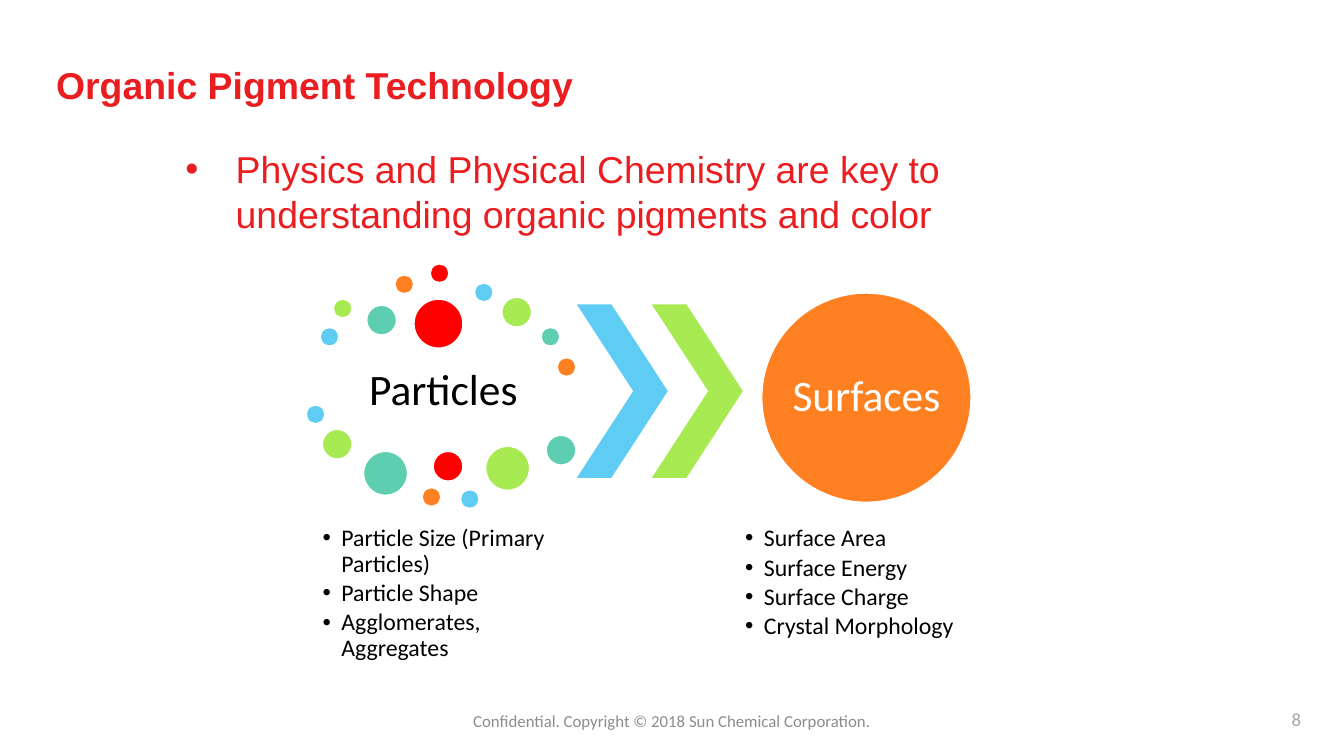
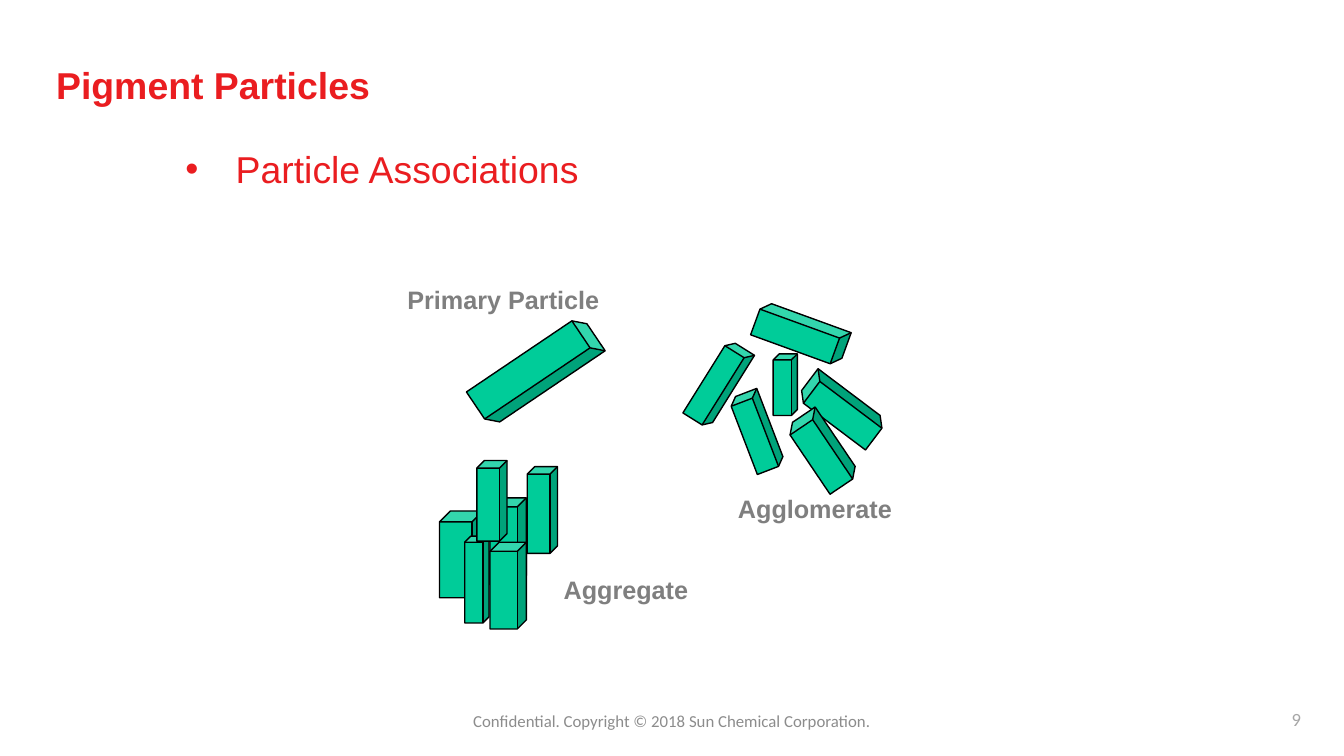
from dataclasses import dataclass
from itertools import cycle

from lxml.etree import SubElement
from pptx import Presentation
from pptx.dml.color import RGBColor
from pptx.enum.shapes import MSO_SHAPE
from pptx.enum.text import MSO_ANCHOR, PP_ALIGN
from pptx.oxml.ns import qn
from pptx.util import Pt


@dataclass(frozen=True)
class Theme:
    heading_font: str = "Arial"
    body_font: str = "Calibri"
    red: str = "EA1D20"
    black: str = "000000"
    white: str = "FFFFFF"
    label_grey: str = "7F7F7F"
    footer_grey: str = "8C8C8C"
    number_grey: str = "A6A6A6"
    sky: str = "5ECCF3"
    lime: str = "A7EA52"
    teal: str = "5DCEAF"
    orange: str = "FF8021"
    dot_red: str = "FF0000"
    cube: str = "00CC99"
    heading: float = 26.7
    concept: float = 31
    label: float = 18
    detail: float = 17
    number: float = 13.3
    footer: float = 12


T = Theme()
COPYRIGHT = "Confidential. Copyright © 2018 Sun Chemical Corporation."

# Dot diameters, then (left, top, diameter) inside the particle cloud
SMALL, MEDIUM, LARGE, HUGE = 14.4, 22.3, 32.4, 36
DOTS = [
    (10, 45.4, SMALL), (19.4, 25.2, SMALL), (43.2, 29.5, MEDIUM),
    (63.4, 7.9, SMALL), (88.6, 0, SMALL), (120.2, 13.7, SMALL),
    (139.7, 23.8, MEDIUM), (167.8, 45.4, SMALL), (179.3, 67, SMALL),
    (77, 25.2, HUGE), (0, 100.8, SMALL), (11.5, 118.1, MEDIUM),
    (41, 133.9, LARGE), (82.8, 159.8, SMALL), (90.7, 133.9, MEDIUM),
    (110.2, 161.3, SMALL), (128.2, 130.3, LARGE), (171.4, 122.4, MEDIUM),
]

# (left, top, width, height, rotation) inside each cluster
PRIMARY = [(0, 0, 31, 98.6, 56)]
AGGREGATE = [
    (0, 36, 31, 62, 0), (36, 26.6, 26, 62, 0), (36, 58.3, 26, 62, 0),
    (18, 54, 17.3, 62, 0), (62.6, 4.3, 21.6, 62, 0), (26.6, 0, 21.6, 57.6, 0),
]
AGGLOMERATE = [
    (0, 18, 21.6, 62, 32), (27.4, 54, 21.6, 57.6, 339),
    (49.7, 27.4, 17.3, 44, 0), (85.7, 36, 26, 62, 307),
    (72, 67.7, 26, 57.6, 326), (36, 0, 67, 26, 20),
]


def rgb(value):
    return RGBColor.from_string(value)


def add_text(s, box, lines, font, size, color, bold=False, align=PP_ALIGN.LEFT,
             anchor=MSO_ANCHOR.TOP, inset=(7.2, 3.6), wrap=True, indent=0,
             line_spacing=None, after=0):
    """Add a text box with one paragraph per line; an indent makes them bullets."""
    tf = s.shapes.add_textbox(*map(Pt, box)).text_frame
    tf.word_wrap = wrap
    tf.vertical_anchor = anchor
    tf.margin_left = tf.margin_right = Pt(inset[0])
    tf.margin_top = tf.margin_bottom = Pt(inset[1])
    for i, line in enumerate(lines):
        p = tf.add_paragraph() if i else tf.paragraphs[0]
        if indent:
            pPr = p._p.get_or_add_pPr()
            pPr.set("marL", str(Pt(indent)))
            pPr.set("indent", str(-Pt(indent)))
            SubElement(pPr, qn("a:buFont")).set("typeface", "Arial")
            SubElement(pPr, qn("a:buChar")).set("char", "•")
        p.alignment = align
        p.space_after = Pt(after)
        if line_spacing:
            p.line_spacing = line_spacing
        r = p.add_run()
        r.text = line
        r.font.name, r.font.size, r.font.bold = font, Pt(size), bold
        r.font.color.rgb = rgb(color)


def add_preset(s, kind, box, fill, line=None, weight=0):
    sp = s.shapes.add_shape(kind, *map(Pt, box))
    sp.shadow.inherit = False
    sp.fill.solid()
    sp.fill.fore_color.rgb = rgb(fill)
    if line:
        sp.line.color.rgb = rgb(line)
        sp.line.width = Pt(weight)
    else:
        sp.line.fill.background()
    return sp


def add_frame(prs, title, statement, number):
    """Add a slide with its title, lead bullet, footer and number."""
    s = prs.slides.add_slide(prs.slide_layouts[6])
    middle = MSO_ANCHOR.MIDDLE
    add_text(s, (33, 40.3, 781, 39.6), [title], T.heading_font, T.heading,
             T.red, bold=True, anchor=middle)
    add_text(s, (125.3, 101, 620, 62), [statement], T.heading_font, T.heading,
             T.red, indent=36)
    add_text(s, (318, 500.4, 324, 28.8), [COPYRIGHT], T.body_font, T.footer,
             T.footer_grey, align=PP_ALIGN.CENTER, anchor=middle)
    add_text(s, (715, 499, 224, 28.8), [str(number)], T.body_font, T.number,
             T.number_grey, align=PP_ALIGN.RIGHT, anchor=middle, inset=(9.6, 4.8))
    return s


def add_concept(s, box, name, color):
    add_text(s, box, [name], T.body_font, T.concept, color,
             align=PP_ALIGN.CENTER, anchor=MSO_ANCHOR.MIDDLE, inset=(0, 0),
             line_spacing=0.9)


def add_details(s, left, lines):
    add_text(s, (left, 373.7, 177, 109.4), lines, T.body_font, T.detail, T.black,
             inset=(2.2, 2.2), indent=13.5, line_spacing=0.9, after=2.5)


def add_particle_cloud(s, left, top):
    add_concept(s, (left + 10, top + 62.6, 177, 58.3), "Particles", T.black)
    colors = cycle([T.sky, T.lime, T.teal, T.orange, T.dot_red])
    for (x, y, size), color in zip(DOTS, colors):
        add_preset(s, MSO_SHAPE.OVAL, (left + x, top + y, size, size),
                   color, T.white, 2)


def add_chevrons(s, left, top):
    for i, color in enumerate([T.sky, T.lime]):
        sp = add_preset(s, MSO_SHAPE.CHEVRON,
                        (left + i * 53.6, top, 65, 124), color)
        sp.adjustments[0] = 0.62


def add_surface_disc(s, left, top, size):
    box = (left, top, size, size)
    add_preset(s, MSO_SHAPE.OVAL, box, T.orange, T.white, 2)
    add_concept(s, box, "Surfaces", T.white)


def add_cubes(s, left, top, cubes):
    for x, y, width, height, rotation in cubes:
        sp = add_preset(s, MSO_SHAPE.CUBE, (left + x, top + y, width, height),
                        T.cube, T.black, 1)
        sp.rotation = rotation


def add_label(s, box, text, align=PP_ALIGN.CENTER):
    add_text(s, box, [text], T.heading_font, T.label, T.label_grey, bold=True,
             align=align, inset=(5, 3), wrap=False)


def build_technology_slide(prs):
    s = add_frame(prs, "Organic Pigment Technology",
                  "Physics and Physical Chemistry are key to "
                  "understanding organic pigments and color", 8)
    add_particle_cloud(s, 218.2, 188)
    add_details(s, 228.2, ["Particle Size (Primary Particles)",
                           "Particle Shape", "Agglomerates, Aggregates"])
    add_chevrons(s, 412, 217.4)
    add_surface_disc(s, 543.6, 208.8, 150.5)
    add_details(s, 530, ["Surface Area", "Surface Energy",
                         "Surface Charge", "Crystal Morphology"])


def build_particles_slide(prs):
    s = add_frame(prs, "Pigment Particles", "Particle Associations", 9)
    add_label(s, (286, 200.2, 212, 44), "Primary Particle", PP_ALIGN.LEFT)
    add_cubes(s, 367.2, 216, PRIMARY)
    add_cubes(s, 314, 329, AGGREGATE)
    add_cubes(s, 502.6, 225.4, AGGLOMERATE)
    add_label(s, (521.3, 349.2, 121.7, 27.4), "Agglomerate")
    add_label(s, (396.7, 407.5, 100.8, 27.4), "Aggregate")


def main():
    prs = Presentation()
    prs.slide_width, prs.slide_height = Pt(960), Pt(540)
    build_technology_slide(prs)
    build_particles_slide(prs)
    prs.save("out.pptx")


if __name__ == "__main__":
    main()
